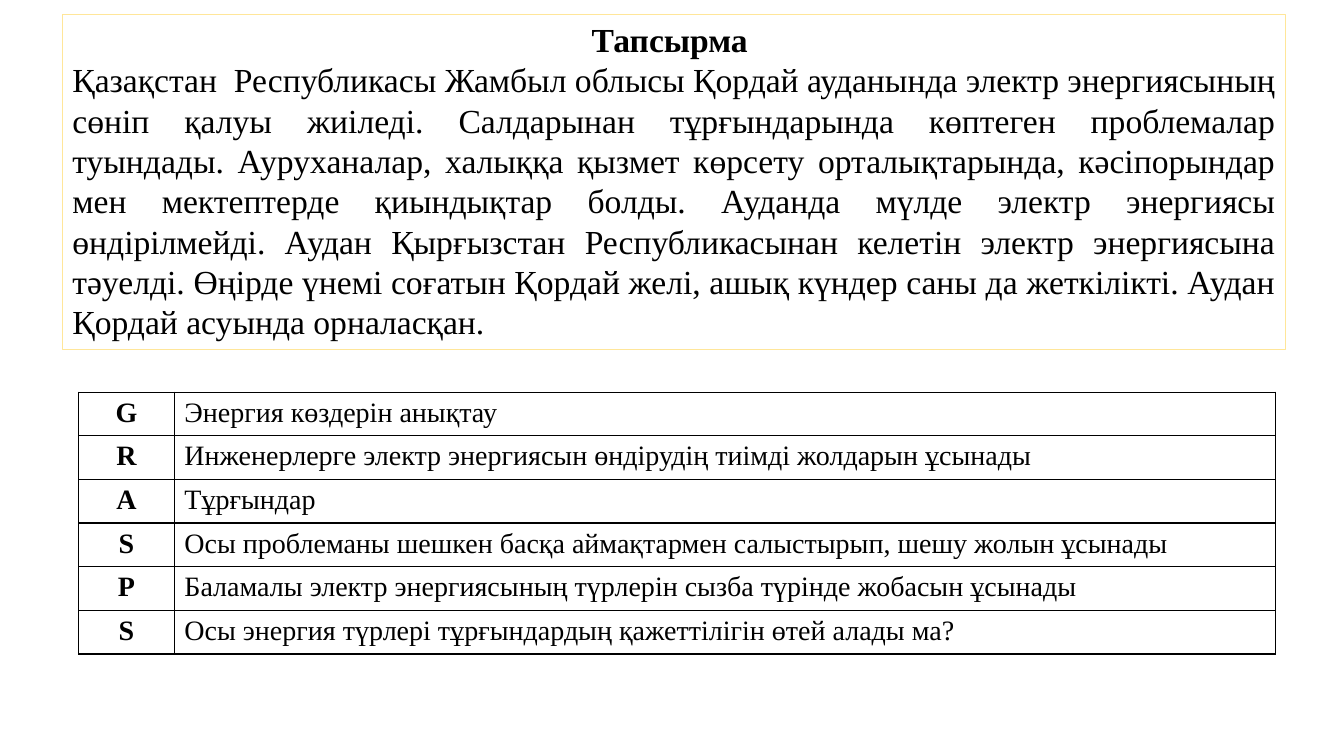
from lxml import etree
from pptx import Presentation
from pptx import util as u
from pptx.dml.color import RGBColor
from pptx.enum import shapes, text
from pptx.oxml.ns import qn

FONT = "Times New Roman"
BLACK, GOLD = "000000", "FFE699"
HEADING = "Тапсырма "
TASK = (
    "Қазақстан  Республикасы Жамбыл облысы Қордай ауданында электр энергиясының "
    "сөніп қалуы жиіледі. Салдарынан тұрғындарында көптеген проблемалар туындады. "
    "Ауруханалар, халыққа қызмет көрсету орталықтарында, кәсіпорындар мен мектептерде "
    "қиындықтар болды. Ауданда мүлде электр энергиясы өндірілмейді. Аудан Қырғызстан "
    "Республикасынан келетін электр энергиясына тәуелді. Өңірде үнемі соғатын Қордай "
    "желі, ашық күндер саны да жеткілікті. Аудан Қордай асуында орналасқан."
)
GRASPS = [
    ("G", "Энергия көздерін анықтау"),
    ("R", "Инженерлерге электр энергиясын өндірудің тиімді жолдарын ұсынады"),
    ("A", "Тұрғындар"),
    ("S", "Осы проблеманы шешкен басқа аймақтармен салыстырып, шешу жолын ұсынады"),
    ("P", "Баламалы электр энергиясының түрлерін сызба түрінде жобасын ұсынады"),
    ("S", "Осы энергия түрлері тұрғындардың қажеттілігін өтей алады ма?"),
]
TASK_BOX = (0.62, 0.14, 12.13, 3.33)
TABLE_BOX = (0.78, 3.89, 11.87, 2.6)
LETTER_SHARE = 0.08


def rgb(value):
    return RGBColor.from_string(value)


def write(p, content, size, align, bold=False):
    p.text = content
    p.alignment = align
    p.font.name = FONT
    p.font.size = u.Pt(size)
    p.font.bold = bold
    p.font.color.rgb = rgb(BLACK)


def add_borders(cell):
    tcPr = cell._tc.get_or_add_tcPr()
    for i, side in enumerate(("lnL", "lnR", "lnT", "lnB")):
        ln = etree.Element(qn(f"a:{side}"), w=str(u.Pt(1)))
        fill = etree.SubElement(ln, qn("a:solidFill"))
        etree.SubElement(fill, qn("a:srgbClr"), val=BLACK)
        tcPr.insert(i, ln)


def add_task(s):
    sp = s.shapes.add_shape(shapes.MSO_SHAPE.RECTANGLE, *map(u.Inches, TASK_BOX))
    sp.shadow.inherit = False
    sp.fill.background()
    sp.line.color.rgb = rgb(GOLD)
    sp.line.width = u.Pt(0.75)
    tf = sp.text_frame
    tf.word_wrap = True
    tf.auto_size = text.MSO_AUTO_SIZE.SHAPE_TO_FIT_TEXT
    tf.vertical_anchor = text.MSO_ANCHOR.TOP
    write(tf.paragraphs[0], HEADING, 24, text.PP_ALIGN.CENTER, True)
    write(tf.add_paragraph(), TASK, 24, text.PP_ALIGN.JUSTIFY)


def add_grasps(s):
    left, top, width, height = map(u.Inches, TABLE_BOX)
    table = s.shapes.add_table(len(GRASPS), 2, left, top, width, height).table
    table.first_row = table.horz_banding = False
    table.columns[0].width = int(width * LETTER_SHARE)
    table.columns[1].width = width - table.columns[0].width
    for row, texts in enumerate(GRASPS):
        for col, content in enumerate(texts):
            cell = table.cell(row, col)
            cell.fill.background()
            add_borders(cell)
            align = text.PP_ALIGN.LEFT if col else text.PP_ALIGN.CENTER
            write(cell.text_frame.paragraphs[0], content, 20, align, col == 0)


def main():
    prs = Presentation()
    prs.slide_width, prs.slide_height = u.Inches(13.33), u.Inches(7.5)
    s = prs.slides.add_slide(prs.slide_layouts[6])
    add_grasps(s)
    add_task(s)
    prs.save("out.pptx")


if __name__ == "__main__":
    main()
